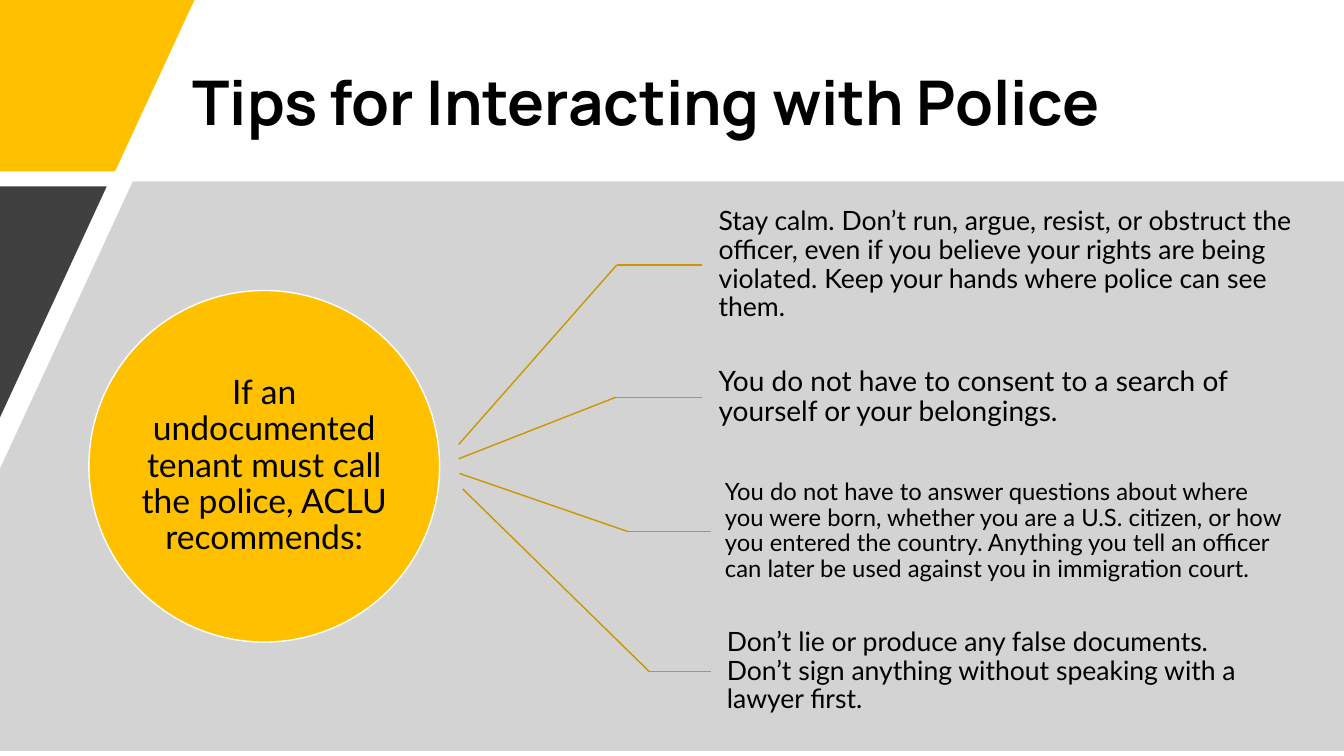
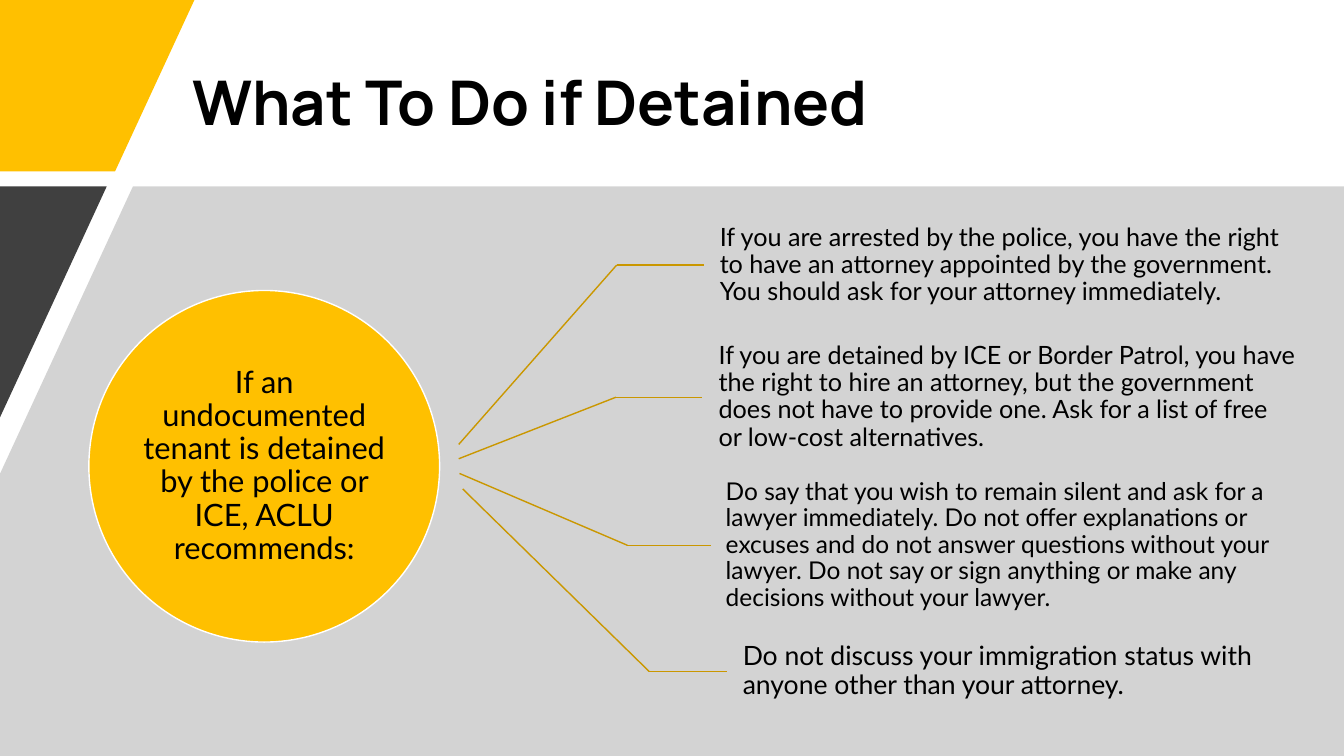
import pptx
import pptx.util
import pptx.dml.color
import pptx.enum.shapes
import pptx.enum.text
import pptx.oxml

Cm = pptx.util.Cm
Align = pptx.enum.text.PP_ALIGN

SLIDE_WIDTH, SLIDE_HEIGHT = 33.87, 19.05
COLOURS = {
    "gold": "FFC000",
    "gold line": "CA9700",
    "charcoal": "404040",
    "grey": "A6A6A6",
    "white": "FFFFFF",
    "black": "000000",
}
TITLE_FONT, BODY_FONT = "Manrope", "Lato"

# Per branch: start of the ray, elbow x, right edge, height and inset of the tip
BRANCHES = [
    ((11.56, 11.2), 15.54, 33.07, 3.58, 0.41),
    ((11.56, 11.56), 15.52, 33.07, 3.05, 0.41),
    ((11.58, 11.93), 15.81, 32.82, 3.73, 0.36),
    ((11.66, 12.32), 16.36, 32.26, 3.35, 0.41),
]

# Per tip: left edge, middle height, text size, text
SLIDES = [
    {
        "title": "Tips for Interacting with Police",
        "panel_top": 4.57,
        "hub": ("If an undocumented tenant must call the police, ACLU recommends:", 24),
        "tips": [
            (17.7, 6.68, 19, "Stay calm. Don’t run, argue, resist, or obstruct the officer, "
             "even if you believe your rights are being violated. "
             "Keep your hands where police can see them."),
            (17.7, 10.01, 20, "You do not have to consent to a search of yourself "
             "or your belongings."),
            (17.91, 13.39, 17, "You do not have to answer questions about where you were born, "
             "whether you are a U.S. citizen, or how you entered the country. "
             "Anything you tell an officer can later be used against you "
             "in immigration court."),
            (17.91, 16.92, 19, "Don’t lie or produce any false documents. "
             "Don’t sign anything without speaking with a lawyer first."),
        ],
    },
    {
        "title": "What To Do if Detained",
        "panel_top": 4.7,
        "hub": ("If an undocumented tenant is detained by the police or ICE, "
                "ACLU recommends:", 22),
        "tips": [
            (17.73, 6.68, 18, "If you are arrested by the police, you have the right to have "
             "an attorney appointed by the government. "
             "You should ask for your attorney immediately."),
            (17.7, 10.01, 18, "If you are detained by ICE or Border Patrol, you have the right "
             "to hire an attorney, but the government does not have to provide one. "
             "Ask for a list of free or low-cost alternatives."),
            (17.93, 13.74, 17.5, "Do say that you wish to remain silent and ask for a lawyer "
             "immediately. Do not offer explanations or excuses and do not answer "
             "questions without your lawyer. Do not say or sign anything or make any "
             "decisions without your lawyer."),
            (18.31, 16.92, 19, "Do not discuss your immigration status with anyone "
             "other than your attorney."),
        ],
    },
]


def colour(name):
    return pptx.dml.color.RGBColor.from_string(COLOURS[name])


def write(frame, text, size, font=BODY_FONT, bold=False, align=Align.LEFT, insets=(0, 0)):
    """Fill a text frame; insets are horizontal and vertical, in centimetres."""
    frame.word_wrap = True
    frame.auto_size = pptx.enum.text.MSO_AUTO_SIZE.NONE
    frame.vertical_anchor = pptx.enum.text.MSO_ANCHOR.MIDDLE
    frame.margin_left = frame.margin_right = Cm(insets[0])
    frame.margin_top = frame.margin_bottom = Cm(insets[1])
    paragraph = frame.paragraphs[0]
    paragraph.alignment = align
    paragraph.line_spacing = 0.9
    paragraph.space_before = pptx.util.Pt(0)
    run = paragraph.add_run()
    run.text = text
    run.font.name = font
    run.font.size = pptx.util.Pt(size)
    run.font.bold = bold
    run.font.color.rgb = colour("black")


class Deck:
    def __init__(self):
        self.presentation = pptx.Presentation()
        self.presentation.slide_width = Cm(SLIDE_WIDTH)
        self.presentation.slide_height = Cm(SLIDE_HEIGHT)
        self.slide = None

    def new_slide(self, title):
        title_only = self.presentation.slide_layouts[5]
        self.slide = self.presentation.slides.add_slide(title_only)
        heading = self.slide.shapes.title
        heading.left, heading.top = Cm(4.6), Cm(1.02)
        heading.width, heading.height = Cm(26.01), Cm(3.3)
        write(heading.text_frame, title, 44, font=TITLE_FONT, bold=True, insets=(0.25, 0.13))

    def polygon(self, points, fill, opacity=None):
        corners = [(Cm(x), Cm(y)) for x, y in points]
        builder = self.slide.shapes.build_freeform(*corners[0])
        builder.add_line_segments(corners[1:], close=True)
        outline = builder.convert_to_shape()
        outline.shadow.inherit = False
        outline.fill.solid()
        outline.fill.fore_color.rgb = colour(fill)
        outline.line.fill.background()
        if opacity is not None:
            fill_colour = outline._element.spPr.find(".//" + pptx.oxml.ns.qn("a:srgbClr"))
            alpha = pptx.oxml.parse_xml(
                f'<a:alpha {pptx.oxml.ns.nsdecls("a")} val="{opacity * 1000}"/>')
            fill_colour.append(alpha)

    def backdrop(self, panel_top):
        bottom = panel_top + 14.35
        self.polygon([(0, 0), (4.9, 0), (2.9, 4.32), (0, 4.32)], "gold")
        self.polygon([(3.35, panel_top), (SLIDE_WIDTH, panel_top), (SLIDE_WIDTH, bottom),
                      (0, bottom), (0, panel_top + 7.24)], "grey", opacity=49)
        self.polygon([(0, 4.7), (2.69, 4.7), (0, 10.52)], "charcoal")

    def hub(self, text, size):
        circle = self.slide.shapes.add_shape(
            pptx.enum.shapes.MSO_SHAPE.OVAL, Cm(2.24), Cm(7.32), Cm(8.84), Cm(8.86))
        circle.shadow.inherit = False
        circle.fill.solid()
        circle.fill.fore_color.rgb = colour("gold")
        circle.line.color.rgb = colour("white")
        circle.line.width = pptx.util.Pt(1)
        write(circle.text_frame, text, size, align=Align.CENTER)

    def line(self, start, end):
        segment = self.slide.shapes.add_connector(
            pptx.enum.shapes.MSO_CONNECTOR.STRAIGHT, *(Cm(v) for v in (*start, *end)))
        segment.line.color.rgb = colour("gold line")
        segment.line.width = pptx.util.Pt(1)
        segment._element.spPr.append(
            pptx.oxml.parse_xml(f'<a:effectLst {pptx.oxml.ns.nsdecls("a")}/>'))
        return segment

    def branch(self, geometry, tip):
        start, elbow_x, right, height, inset = geometry
        left, middle, size, text = tip
        advice = self.slide.shapes.add_textbox(
            Cm(left), Cm(middle - height / 2), Cm(right - left), Cm(height))
        write(advice.text_frame, text, size, insets=(inset, inset))
        elbow = (elbow_x, middle)
        self.line(start, elbow)
        self.line(elbow, (left, middle)).end_connect(advice, 1)


def main():
    deck = Deck()
    for content in SLIDES:
        deck.new_slide(content["title"])
        deck.backdrop(content["panel_top"])
        deck.hub(*content["hub"])
        for geometry, tip in zip(BRANCHES, content["tips"]):
            deck.branch(geometry, tip)
    deck.presentation.save("out.pptx")


if __name__ == "__main__":
    main()
